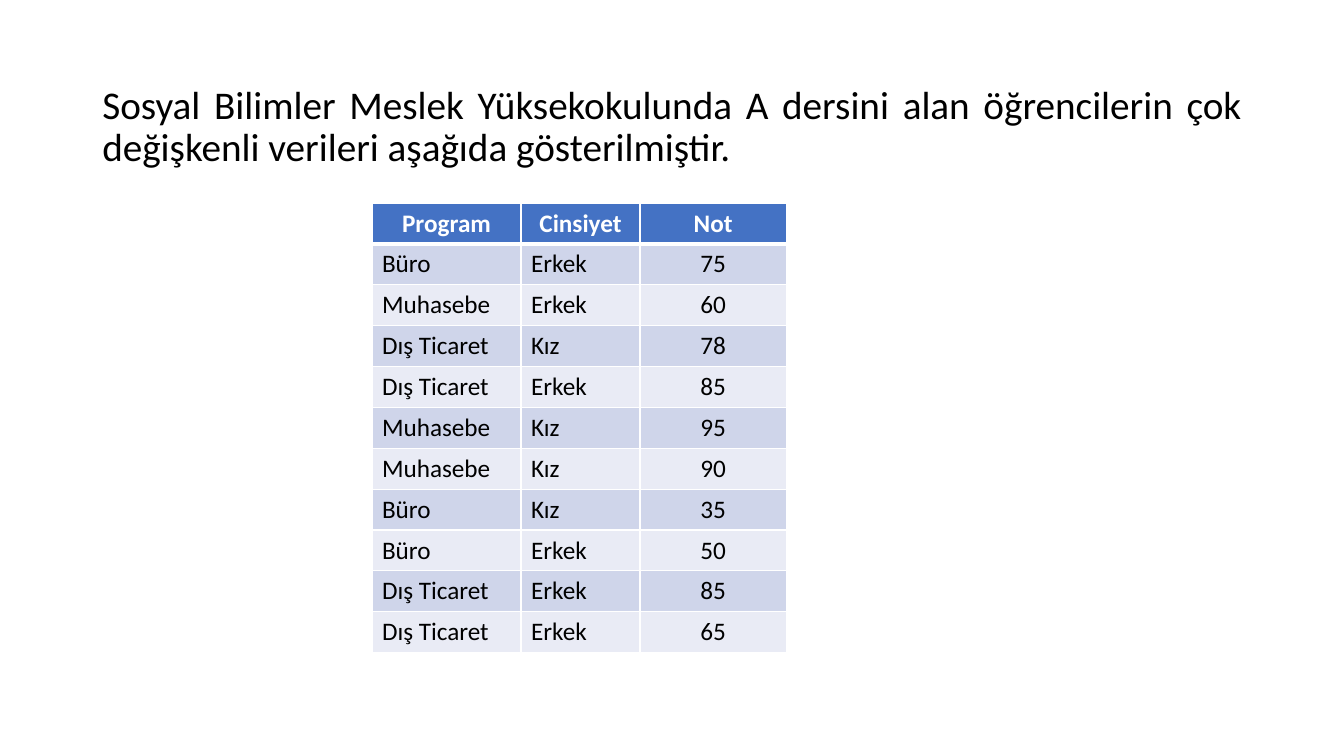
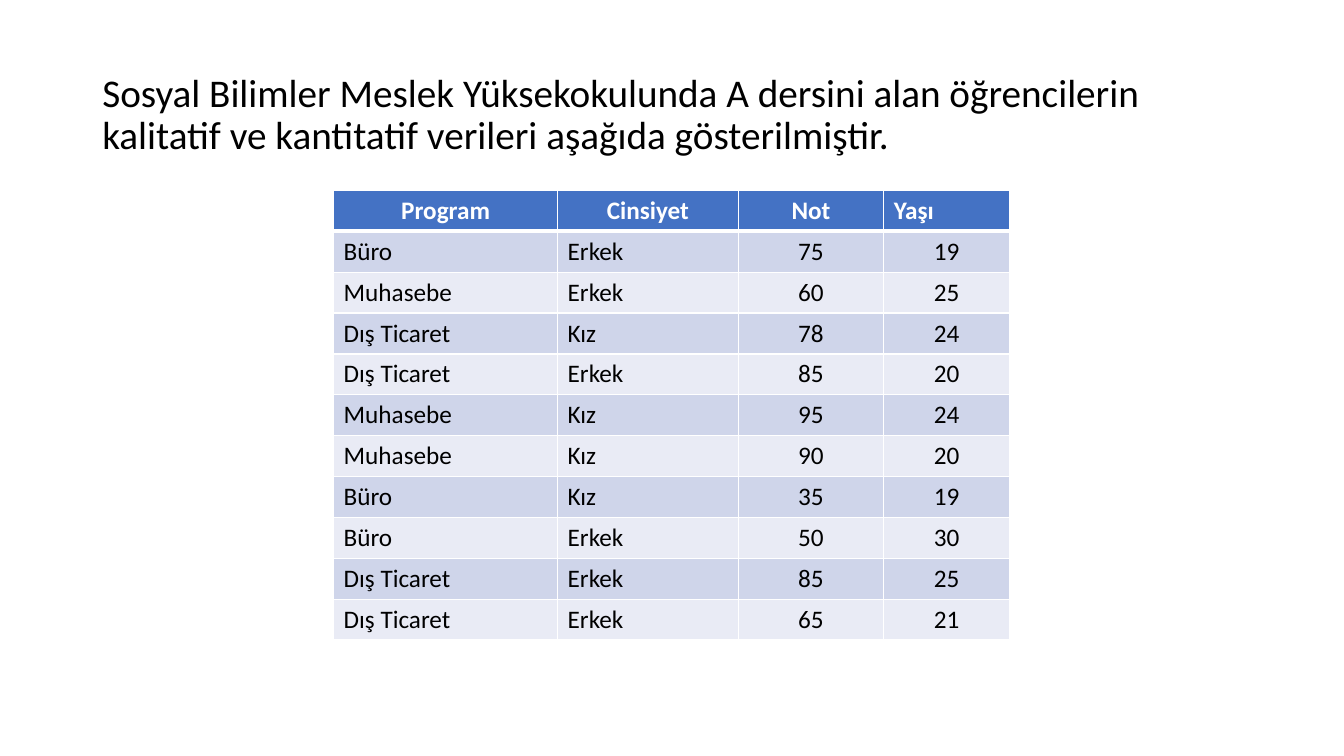
from lxml import etree
from pptx import Presentation
from pptx.dml.color import RGBColor
from pptx.enum import text
from pptx.oxml import ns
from pptx.util import Pt

FONT = "Calibri"
BLACK = RGBColor(0x00, 0x00, 0x00)
WHITE = RGBColor(0xFF, 0xFF, 0xFF)
HEADER_BLUE = RGBColor(0x44, 0x72, 0xC4)
BANDS = [RGBColor(0xCF, 0xD5, 0xEA), RGBColor(0xE9, 0xEB, 0xF5)]

LEFT, CENTER = text.PP_ALIGN.LEFT, text.PP_ALIGN.CENTER
JUSTIFY = text.PP_ALIGN.JUSTIFY
ROW_HEIGHT = 29.2

# Student records: program, gender, grade, age
STUDENTS = [
    ("Büro", "Erkek", 75, 19),
    ("Muhasebe", "Erkek", 60, 25),
    ("Dış Ticaret", "Kız", 78, 24),
    ("Dış Ticaret", "Erkek", 85, 20),
    ("Muhasebe", "Kız", 95, 24),
    ("Muhasebe", "Kız", 90, 20),
    ("Büro", "Kız", 35, 19),
    ("Büro", "Erkek", 50, 30),
    ("Dış Ticaret", "Erkek", 85, 25),
    ("Dış Ticaret", "Erkek", 65, 21),
]


def style_paragraph(paragraph, size, color, alignment, bold=False):
    paragraph.alignment = alignment
    font = paragraph.font
    font.name, font.size, font.bold = FONT, Pt(size), bold
    font.color.rgb = color


def add_intro(slide, box, wording, alignment):
    frame = slide.shapes.add_textbox(*map(Pt, box)).text_frame
    frame.word_wrap = True
    paragraph = frame.paragraphs[0]
    paragraph.text = wording
    paragraph.line_spacing = 0.9
    paragraph.space_before = Pt(10)
    style_paragraph(paragraph, 28, BLACK, alignment)


def set_borders(cell, bottom_width):
    """White cell borders, placed before the fill as the schema requires."""
    properties = cell._tc.get_or_add_tcPr()
    widths = {"lnL": 1, "lnR": 1, "lnT": 1, "lnB": bottom_width}
    for position, (side, width) in enumerate(widths.items()):
        line = etree.Element(ns.qn(f"a:{side}"), w=str(Pt(width)))
        fill = etree.SubElement(line, ns.qn("a:solidFill"))
        etree.SubElement(fill, ns.qn("a:srgbClr"), val=str(WHITE))
        properties.insert(position, line)


def add_student_table(slide, left, top, headers, header_alignments, widths):
    rows = [headers] + [student[:len(headers)] for student in STUDENTS]
    table = slide.shapes.add_table(
        len(rows), len(headers), Pt(left), Pt(top),
        Pt(sum(widths)), Pt(ROW_HEIGHT * len(rows))).table
    for column, width in zip(table.columns, widths):
        column.width = Pt(width)
    for row_index, values in enumerate(rows):
        table.rows[row_index].height = Pt(ROW_HEIGHT)
        is_header = row_index == 0
        for column_index, value in enumerate(values):
            cell = table.cell(row_index, column_index)
            cell.text = str(value)
            cell.fill.solid()
            cell.fill.fore_color.rgb = (
                HEADER_BLUE if is_header else BANDS[(row_index - 1) % 2])
            set_borders(cell, 3 if is_header else 1)
            if is_header:
                alignment = header_alignments[column_index]
            else:
                alignment = CENTER if isinstance(value, int) else LEFT
            style_paragraph(cell.text_frame.paragraphs[0], 18,
                            WHITE if is_header else BLACK, alignment, is_header)


def add_data_slide(presentation, intro, table):
    slide = presentation.slides.add_slide(presentation.slide_layouts[6])
    add_intro(slide, **intro)
    add_student_table(slide, **table)


def main():
    presentation = Presentation()
    presentation.slide_width, presentation.slide_height = Pt(960), Pt(540)

    # Slide 1: multivariate data
    add_data_slide(
        presentation,
        intro=dict(
            box=(66, 57.6, 828, 429), alignment=JUSTIFY,
            wording="Sosyal Bilimler Meslek Yüksekokulunda A dersini alan "
                    "öğrencilerin çok değişkenli verileri aşağıda gösterilmiştir."),
        table=dict(
            left=265.7, top=145, widths=(106.5, 85, 104.4),
            headers=("Program", "Cinsiyet", "Not"),
            header_alignments=(CENTER, CENTER, CENTER)))

    # Slide 2: qualitative and quantitative data
    add_data_slide(
        presentation,
        intro=dict(
            box=(66, 49, 828, 437), alignment=LEFT,
            wording="Sosyal Bilimler Meslek Yüksekokulunda A dersini alan "
                    "öğrencilerin kalitatif ve kantitatif verileri aşağıda "
                    "gösterilmiştir."),
        table=dict(
            left=238.3, top=136, widths=(160, 129, 104, 90),
            headers=("Program", "Cinsiyet", "Not", "Yaşı"),
            header_alignments=(CENTER, CENTER, CENTER, LEFT)))

    presentation.save("out.pptx")


if __name__ == "__main__":
    main()
